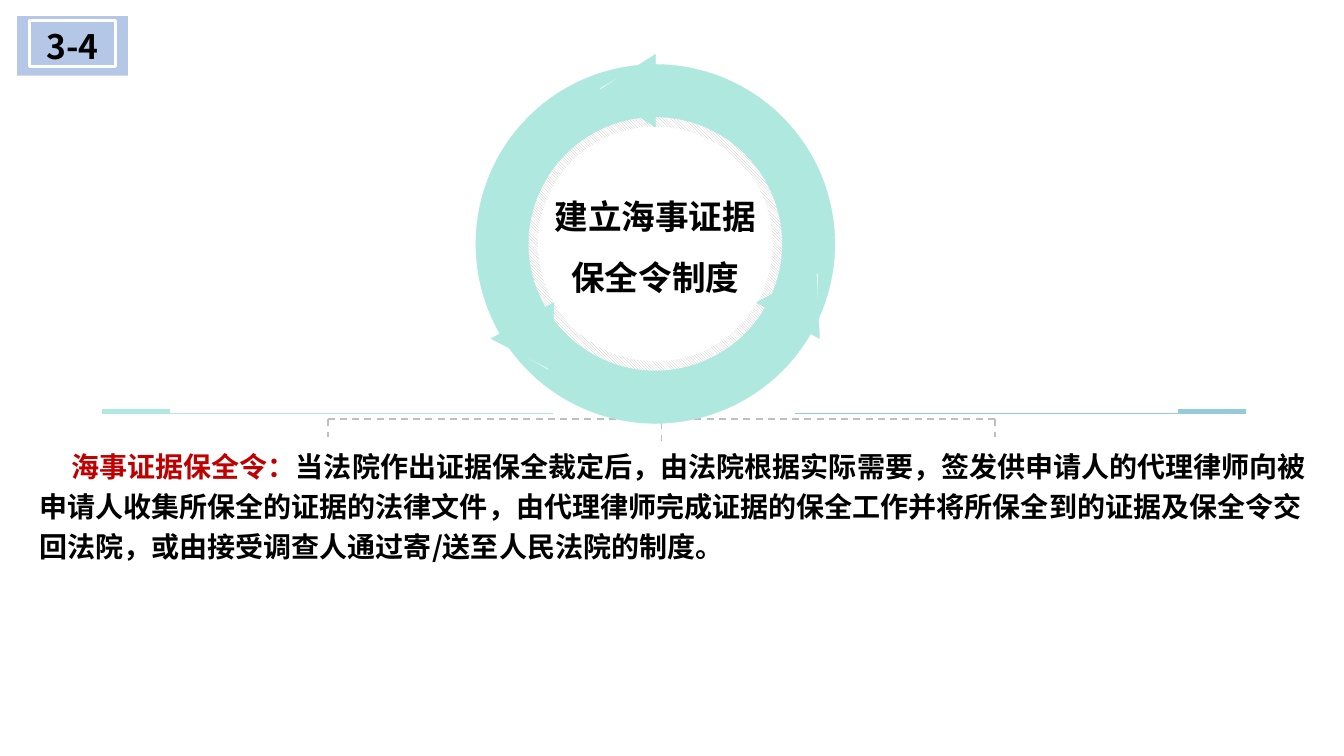
import math
import pptx
import pptx.util
import pptx.dml.color
import pptx.enum.dml
import pptx.enum.shapes
import pptx.enum.text
import pptx.oxml
import pptx.oxml.ns
import lxml.etree

Inches, Pt = pptx.util.Inches, pptx.util.Pt
RGBColor = pptx.dml.color.RGBColor
SHAPE = pptx.enum.shapes.MSO_SHAPE
ALIGN = pptx.enum.text.PP_ALIGN
ANCHOR = pptx.enum.text.MSO_ANCHOR
qn = pptx.oxml.ns.qn

FONT = "Noto Sans CJK SC"
MINT = RGBColor(0xAF, 0xE8, 0xDF)
TEAL = RGBColor(0x93, 0xCB, 0xD6)
GREY = RGBColor(0xBF, 0xBF, 0xBF)
BLUE = RGBColor(0xB4, 0xC7, 0xE7)
RED = RGBColor(0xC0, 0x00, 0x00)
BLACK = RGBColor(0, 0, 0)
WHITE = RGBColor(0xFF, 0xFF, 0xFF)


def add_line(s, x1, y1, x2, y2, color, width, dash=None):
    line = s.shapes.add_connector(pptx.enum.shapes.MSO_CONNECTOR.STRAIGHT,
                                  Inches(x1), Inches(y1), Inches(x2), Inches(y2))
    line.line.color.rgb = color
    line.line.width = Pt(width)
    line.line.dash_style = dash
    lxml.etree.SubElement(line._element.spPr, qn("a:effectLst"))


def add_plain_shape(s, kind, x, y, w, h):
    sp = s.shapes.add_shape(kind, Inches(x), Inches(y), Inches(w), Inches(h))
    sp.shadow.inherit = False
    sp.fill.background()
    sp.line.fill.background()
    return sp


def format_run(r, size, color):
    r.font.size = Pt(size)
    r.font.bold = True
    r.font.name = FONT
    r.font.color.rgb = color
    ea = r._r.get_or_add_rPr().makeelement(qn("a:ea"), {"typeface": FONT})
    r.font._element.find(qn("a:latin")).addnext(ea)


def add_bracket(s, x, y, w, h):
    """Dashed bracket with a drop at each end and a stem in the middle."""
    dash = pptx.enum.dml.MSO_LINE.DASH
    mid = x + w / 2
    add_line(s, mid, y - 0.09, mid, y + 0.22, GREY, 1.25, dash)
    add_line(s, x, y, x + w, y, GREY, 1.25, dash)
    for end in (x, x + w):
        add_line(s, end, y, end, y + h, GREY, 1.25, dash)


def add_rule(s, x, y, w, color, accent_at):
    """Thin rule with a short thick accent starting accent_at from its left."""
    add_line(s, x + w, y, x, y, color, 0.5)
    add_line(s, x + accent_at + 0.68, y - 0.02, x + accent_at, y - 0.02, color, 2.75)


def add_arrow(s, cx, cy, turn):
    """Curved arrow around a centre, outlined by (radius, degrees) corners."""
    # Arcs are split where a turned arrow reaches its widest or tallest
    angles = (-25, 0, 30, 60, 90)
    corners = ([(1.78, a) for a in angles]
               + [(1.88, 90), (1.62, 110.6), (1.16, 90)]
               + [(1.26, a) for a in reversed(angles)]
               + [(1.64, -10.2)])

    def place(radius, degrees):
        t = math.radians(degrees + turn)
        return Inches(cx + radius * math.cos(t)), Inches(cy - radius * math.sin(t))

    points = [place(*corner) for corner in corners]
    builder = s.shapes.build_freeform(*points[0])
    builder.add_line_segments(points[1:], close=True)
    arrow = builder.convert_to_shape()

    # Bend each side that keeps its radius
    sides = list(arrow._element.iter(qn("a:lnTo")))
    for (r0, a0), (r1, a1), side in zip(corners, corners[1:], sides):
        if r0 != r1:
            continue
        reach = 4 / 3 * math.tan(math.radians(a1 - a0) / 4)
        swing = math.degrees(math.atan(reach))
        far = r0 * math.hypot(1, reach)
        side.tag = qn("a:cubicBezTo")
        for i, handle in enumerate((a0 + swing, a1 - swing)):
            x, y = place(far, handle)
            pt = side.makeelement(qn("a:pt"), {"x": str(x - arrow.left), "y": str(y - arrow.top)})
            side.insert(i, pt)

    arrow.shadow.inherit = False
    arrow.fill.solid()
    arrow.fill.fore_color.rgb = MINT
    arrow.line.color.rgb = MINT
    arrow.line.width = Pt(0.25)


def add_cycle(s, cx, cy):
    """Hatched ring with three arrows chasing each other, and a title inside."""
    radius, hole = 1.39, 1.165
    ring = add_plain_shape(s, SHAPE.DONUT, cx - radius, cy - radius, 2 * radius, 2 * radius)
    ring.adjustments[0] = (radius - hole) / (2 * radius)
    ring.fill.patterned()
    ring.fill.pattern = pptx.enum.dml.MSO_PATTERN.LIGHT_DOWNWARD_DIAGONAL
    ring.fill.fore_color.rgb = GREY
    ring.fill.back_color.rgb = WHITE
    for turn in (120, 0, 240):
        add_arrow(s, cx, cy, turn)

    # Title
    title = s.shapes.add_textbox(Inches(cx - 1.26), Inches(cy - 0.81), Inches(2.52), Inches(1.07))
    tf = title.text_frame
    tf.word_wrap = True
    tf.vertical_anchor = ANCHOR.MIDDLE
    tf.margin_left = tf.margin_right = tf.margin_bottom = 0
    tf.margin_top = Inches(0.4)
    tf.text = "建立海事证据\n保全令制度"
    for p in tf.paragraphs:
        p.alignment = ALIGN.CENTER
        p.line_spacing = 1.5
        format_run(p.runs[0], 24, BLACK)


def add_definition(s, x, y, w, h, term, meaning):
    tf = s.shapes.add_textbox(Inches(x), Inches(y), Inches(w), Inches(h)).text_frame
    tf.word_wrap = True
    tf.auto_size = pptx.enum.text.MSO_AUTO_SIZE.SHAPE_TO_FIT_TEXT
    p = tf.paragraphs[0]
    p.line_spacing = 1.2
    p.space_after = Pt(2.6)
    p._p.get_or_add_pPr().set("indent", str(Inches(0.32)))
    for text, color in ((term, RED), (meaning, BLACK)):
        r = p.add_run()
        r.text = text
        format_run(r, 20, color)


def add_badge(s, x, y, w, h, label):
    """Section number with a white inner frame."""
    sp = add_plain_shape(s, SHAPE.RECTANGLE, x, y, w, h)
    sp.fill.solid()
    sp.fill.fore_color.rgb = BLUE
    tf = sp.text_frame
    tf.text = label
    tf.vertical_anchor = ANCHOR.MIDDLE
    p = tf.paragraphs[0]
    p.alignment = ALIGN.CENTER
    format_run(p.runs[0], 24, BLACK)
    frame = add_plain_shape(s, SHAPE.RECTANGLE, x + 0.12, y + 0.04, w - 0.24, h - 0.13)
    frame.line.color.rgb = WHITE
    frame.line.width = Pt(2)


def main():
    prs = pptx.Presentation()
    prs.slide_width, prs.slide_height = Inches(13.33), Inches(7.5)
    s = prs.slides.add_slide(prs.slide_layouts[6])
    add_bracket(s, 3.25, 4.16, 6.62, 0.18)
    add_rule(s, 1.01, 4.1, 4.47, MINT, 0)
    add_rule(s, 7.89, 4.1, 4.47, TEAL, 3.79)
    add_cycle(s, 6.5, 2.42)
    add_definition(s, 0.29, 4.34, 12.98, 1.31, "海事证据保全令：",
                   "当法院作出证据保全裁定后，由法院根据实际需要，签发供申请人的代理律师向被申请人"
                   "收集所保全的证据的法律文件，由代理律师完成证据的保全工作并将所保全到的证据及"
                   "保全令交回法院，或由接受调查人通过寄/送至人民法院的制度。")
    add_badge(s, 0.17, 0.16, 1.1, 0.59, "3-4")
    prs.save("out.pptx")


if __name__ == "__main__":
    main()
